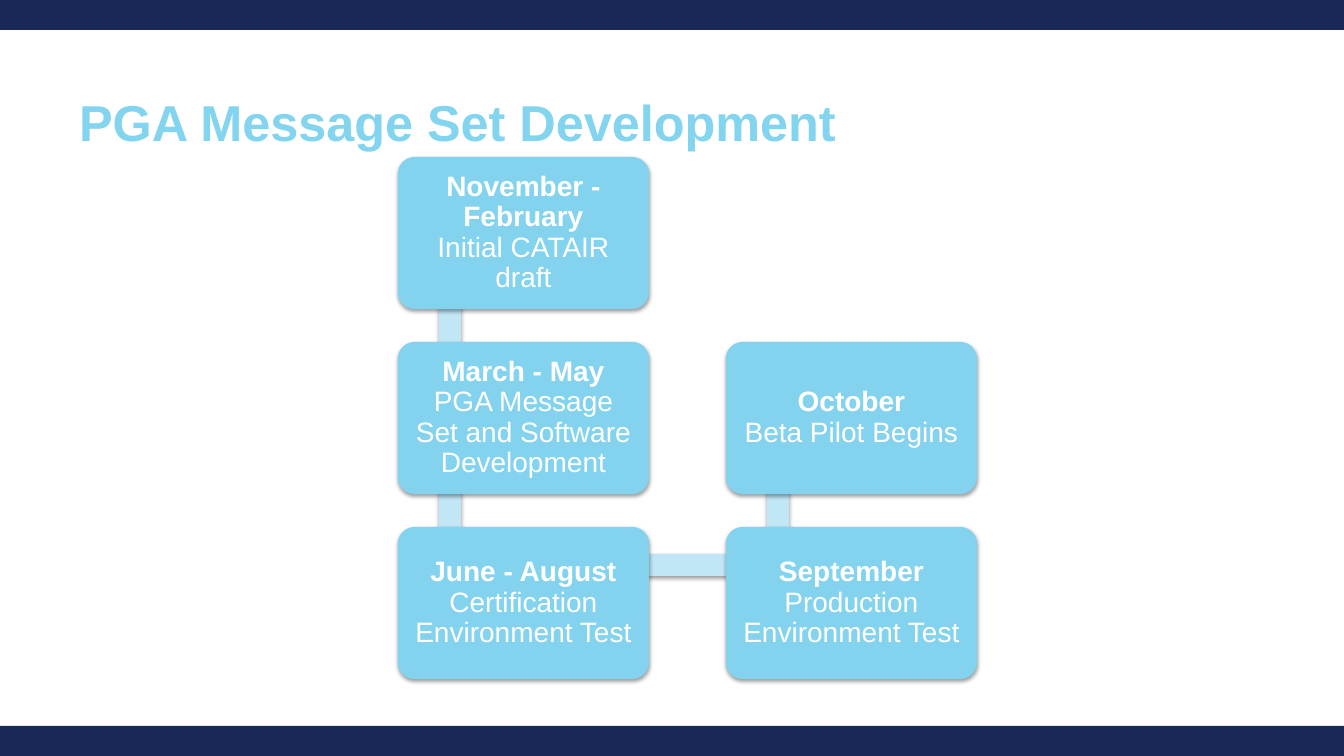
from dataclasses import dataclass

from lxml import etree
from pptx import Presentation
from pptx import util as u
from pptx.dml.color import RGBColor
from pptx.enum import shapes, text
from pptx.oxml import ns

SCALE = 12192000 / 1344
WIDE, HIGH = 1344, 756
COLORS = {"navy": "1A2857", "title": "83D4EF", "box": "83D3EF",
          "bar": "C1E6F6", "white": "FFFFFF", "shade": "000000"}
BOX_W, BOX_H = 247, 148
LEFT, TOP = 400, 159
STEP_X, STEP_Y = 328, 185
BAND, THICK = 30, 22
FRAME = {"word_wrap": True, "auto_size": text.MSO_AUTO_SIZE.NONE}
KIND = shapes.MSO_SHAPE


@dataclass
class Step:
    col: int
    row: int
    date: str
    task: str


@dataclass
class Bar:
    x: int
    y: int
    w: int
    h: int


STEPS = [
    Step(0, 0, "November - February", "Initial CATAIR draft"),
    Step(0, 1, "March - May", "PGA Message Set and Software Development"),
    Step(0, 2, "June - August", "Certification Environment Test"),
    Step(1, 2, "September", "Production Environment Test"),
    Step(1, 1, "October", "Beta Pilot Begins"),
]
BARS = [Bar(LEFT + 39 + col * STEP_X, TOP + 37 + row * STEP_Y, THICK, STEP_Y)
        for col, row in [(0, 0), (0, 1), (1, 1)]]
BARS.append(Bar(LEFT + 51, 554, STEP_X, THICK))


def px(size: int) -> int:
    return round(size * SCALE)


def color(name: str) -> RGBColor:
    return RGBColor.from_string(COLORS[name])


def apply(item, values: dict) -> None:
    for key, value in values.items():
        setattr(item, key, value)


def style(run, size: int, bold: bool, name: str) -> None:
    apply(run.font, {"name": "Arial", "size": u.Pt(size), "bold": bold})
    run.font.color.rgb = color(name)


def shade(shape) -> None:
    effects = shape._element.spPr.find(ns.qn("a:effectLst"))
    outer = etree.SubElement(effects, ns.qn("a:outerShdw"), blurRad="40000",
                             dist="20000", dir="5400000", rotWithShape="0")
    tint = etree.SubElement(outer, ns.qn("a:srgbClr"), val=COLORS["shade"])
    etree.SubElement(tint, ns.qn("a:alpha"), val="38000")


def block(slide, kind, x: int, y: int, w: int, h: int, name: str):
    shape = slide.shapes.add_shape(kind, px(x), px(y), px(w), px(h))
    shape.shadow.inherit = False
    shape.fill.solid()
    shape.fill.fore_color.rgb = color(name)
    shape.line.fill.background()
    return shape


def draw_bar(slide, bar: Bar) -> None:
    shade(block(slide, KIND.RECTANGLE, bar.x, bar.y, bar.w, bar.h, "bar"))


def draw_step(slide, step: Step) -> None:
    box = block(slide, KIND.ROUNDED_RECTANGLE, LEFT + step.col * STEP_X,
                TOP + step.row * STEP_Y, BOX_W, BOX_H, "box")
    box.adjustments[0] = 0.1
    box.line.color.rgb = color("box")
    box.line.width = u.Pt(3)
    shade(box)
    frame = box.text_frame
    sides = ["margin_left", "margin_right", "margin_top", "margin_bottom"]
    apply(frame, FRAME | {"vertical_anchor": text.MSO_ANCHOR.MIDDLE}
          | dict.fromkeys(sides, px(8)))
    para = frame.paragraphs[0]
    apply(para, {"alignment": text.PP_ALIGN.CENTER, "line_spacing": 0.9})
    date = para.add_run()
    date.text = step.date
    style(date, 20, True, "white")
    para.add_line_break()
    task = para.add_run()
    task.text = step.task
    style(task, 20, False, "white")


def draw_title(slide, words: str) -> None:
    title = slide.shapes.title
    apply(title, {"left": px(69), "top": px(86),
                  "width": px(1209), "height": px(123)})
    frame = title.text_frame
    apply(frame, FRAME | {"vertical_anchor": text.MSO_ANCHOR.TOP,
                          "margin_top": px(5)})
    para = frame.paragraphs[0]
    para.alignment = text.PP_ALIGN.LEFT
    run = para.add_run()
    run.text = words
    style(run, 36, True, "title")


def main() -> None:
    deck = Presentation()
    apply(deck, {"slide_width": px(WIDE), "slide_height": px(HIGH)})
    slide = deck.slides.add_slide(deck.slide_layouts[5])
    for y in (HIGH - BAND, 0):
        block(slide, KIND.RECTANGLE, 0, y, WIDE, BAND, "navy")
    draw_title(slide, "PGA Message Set Development")
    for bar in BARS:
        draw_bar(slide, bar)
    for step in STEPS:
        draw_step(slide, step)
    deck.save("out.pptx")


if __name__ == "__main__":
    main()
